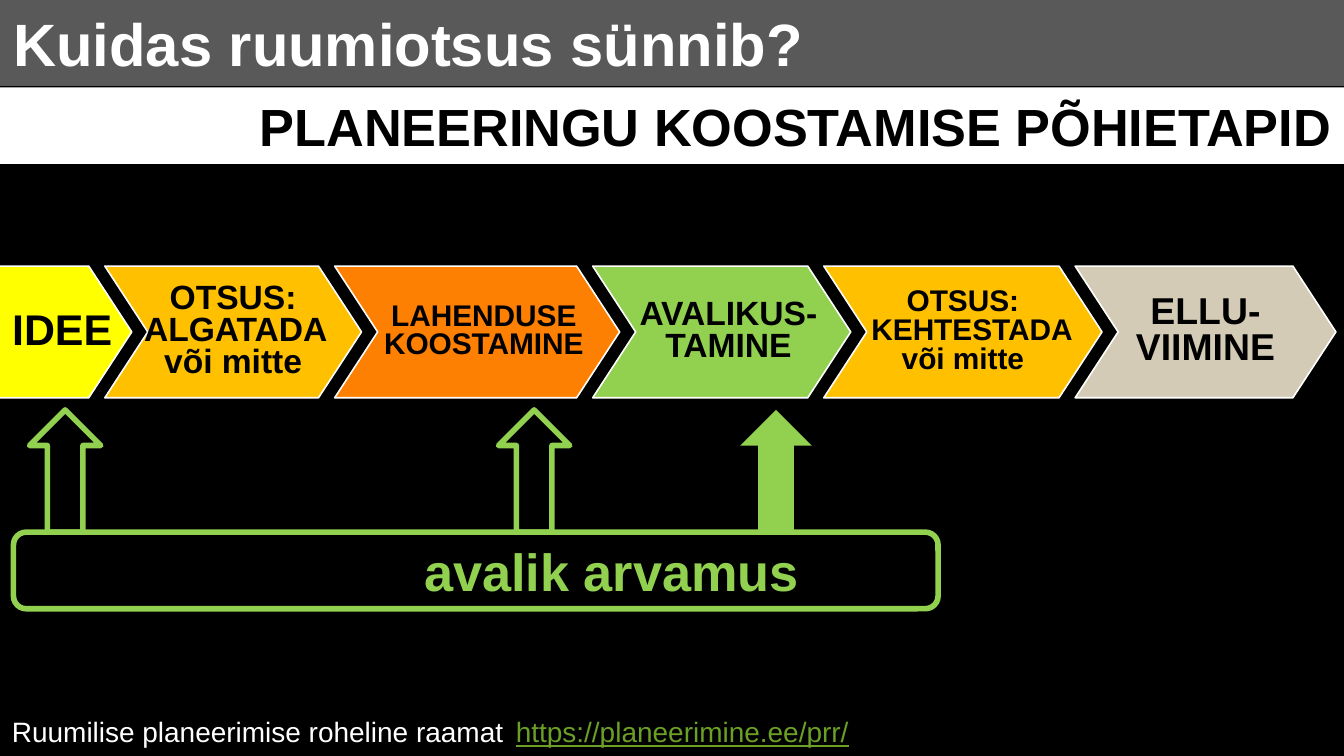
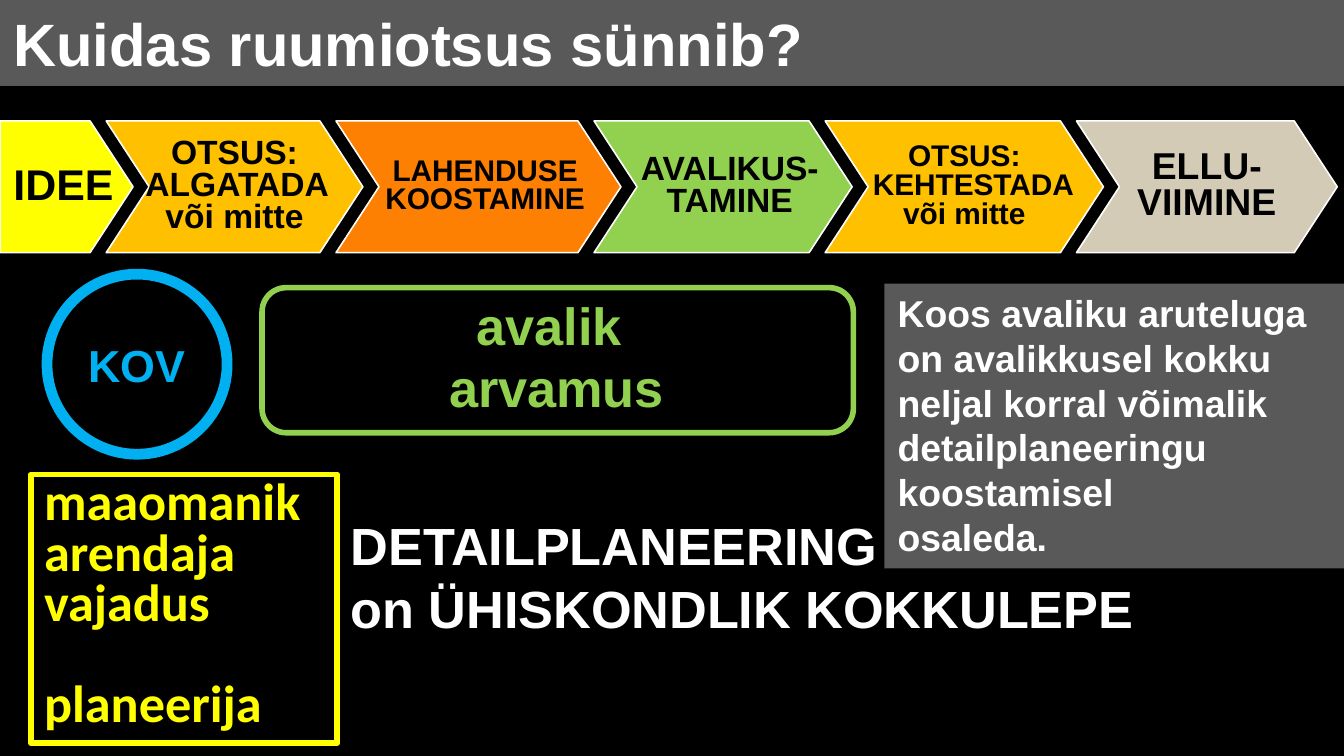
from dataclasses import dataclass

from lxml import etree
from pptx import Presentation
from pptx import util as u
from pptx.dml.color import RGBColor
from pptx.enum import shapes, text
from pptx.oxml import ns

CELL = u.Inches(0.1)
COLUMNS, ROWS = 100, 56.25
COLOURS = {
    "black": "000000", "white": "FFFFFF", "band": "595959", "yellow": "FFFF00",
    "amber": "FFC000", "orange": "FE8002", "green": "92D050", "sand": "D3CBB6",
    "link": "6B9F25", "blue": "00B0F0",
}
TITLE = "Kuidas ruumiotsus sünnib?"
STAGE_OVERLAP, STAGE_POINT, STAGE_HEIGHT = 2, 3.2, 9.8
STAGES = [
    (9.9, "yellow", 23, [("IDEE", 1)]),
    (19.1, "amber", 18, [("OTSUS:", 0), ("ALGATADA ", 1), ("või mitte", 0)]),
    (21.2, "orange", 16, [("LAHENDUSE", 1), ("KOOSTAMINE", 1)]),
    (19.2, "green", 18, [("AVALIKUS-TAMINE", 1)]),
    (20.7, "amber", 16, [("OTSUS:", 0), ("KEHTESTADA ", 1.9), ("või mitte", 0)]),
    (19.4, "sand", 20, [("ELLU-", 0), ("VIIMINE", 0)]),
]
LEFT, CENTER, RIGHT = text.PP_ALIGN.LEFT, text.PP_ALIGN.CENTER, text.PP_ALIGN.RIGHT
SHAPE = shapes.MSO_SHAPE


@dataclass
class Box:
    """A rectangle measured in grid columns and rows."""

    left: float
    top: float
    width: float
    height: float

    def emu(self):
        """Return the four lengths in EMU."""
        return [cells(n) for n in (self.left, self.top, self.width, self.height)]


def cells(count):
    """Convert a number of grid cells to a length."""
    return u.Emu(round(count * CELL))


def colour(name):
    """Look up a named colour."""
    return RGBColor.from_string(COLOURS[name])


def paint(shape, fill=None, line=None, weight=3):
    """Set the fill and outline of a shape and remove its shadow."""
    shape.shadow.inherit = False
    if fill:
        shape.fill.solid()
        shape.fill.fore_color.rgb = colour(fill)
    else:
        shape.fill.background()
    if line:
        shape.line.color.rgb = colour(line)
        shape.line.width = u.Pt(weight)
    else:
        shape.line.fill.background()


def write(shape, lines, size, ink, align=LEFT, bold=True, font="Arial", spacing=None,
          middle=False):
    """Write one paragraph per line and return the paragraphs."""
    frame = shape.text_frame
    frame.word_wrap = True
    frame.vertical_anchor = text.MSO_ANCHOR.MIDDLE if middle else text.MSO_ANCHOR.TOP
    frame.auto_size = (text.MSO_AUTO_SIZE.NONE if middle
                       else text.MSO_AUTO_SIZE.SHAPE_TO_FIT_TEXT)
    frame.text = "\n".join(lines)
    for paragraph in frame.paragraphs:
        paragraph.alignment = align
        if spacing:
            paragraph.line_spacing = spacing
        paragraph.font.name = font
        paragraph.font.size = u.Pt(size)
        paragraph.font.bold = bold
        paragraph.font.color.rgb = colour(ink)
    return frame.paragraphs


def add_shape(slide, kind, box, fill=None, line=None, weight=3):
    """Add a painted preset shape."""
    shape = slide.shapes.add_shape(kind, *box.emu())
    paint(shape, fill, line, weight)
    return shape


def add_label(slide, box, lines, ink, align=LEFT):
    """Add a large bold text box."""
    write(slide.shapes.add_textbox(*box.emu()), lines, 28, ink, align)


def add_base(presentation):
    """Add a black slide with the title band."""
    slide = presentation.slides.add_slide(presentation.slide_layouts[6])
    slide.background.fill.solid()
    slide.background.fill.fore_color.rgb = colour("black")
    band = add_shape(slide, SHAPE.RECTANGLE, Box(0, 0, COLUMNS, 6.4), "band")
    write(band, [TITLE], 32, "white")
    return slide


def add_stage(slide, box, fill, size, lines, first):
    """Add one chevron; the first stage has a straight left edge."""
    right, bottom = box.left + box.width, box.top + box.height
    shoulder, middle = right - STAGE_POINT, box.top + box.height / 2
    points = [(shoulder, box.top), (right, middle), (shoulder, bottom), (box.left, bottom)]
    if not first:
        points.append((box.left + STAGE_POINT, middle))
    builder = slide.shapes.build_freeform(cells(box.left), cells(box.top))
    builder.add_line_segments([(cells(x), cells(y)) for x, y in points])
    stage = builder.convert_to_shape()
    paint(stage, fill, "white", 0.85)
    frame = stage.text_frame
    frame.margin_left = frame.margin_right = cells(0 if first else 1.6)
    frame.margin_top = frame.margin_bottom = cells(0.3)
    paragraphs = write(stage, [words for words, _ in lines], size, "black",
                       LEFT if first else CENTER, spacing=0.9 if first else 0.8, middle=True)
    for paragraph, (_, indent) in zip(paragraphs, lines):
        properties = paragraph._p.get_or_add_pPr()
        properties.set("marL", str(cells(indent)))
        properties.set("indent", "0")


def add_process(slide, left, top):
    """Add the row of overlapping planning stages."""
    for index, (width, fill, size, lines) in enumerate(STAGES):
        add_stage(slide, Box(left, top, width, STAGE_HEIGHT), fill, size, lines, index == 0)
        left += width - STAGE_OVERLAP


def add_opinion(slide, box):
    """Add the public opinion bar with the arrows rising from it."""
    add_label(slide, Box(box.left + 5.4, box.top, 54, box.height), ["avalik arvamus"],
              "green", RIGHT)
    add_shape(slide, SHAPE.ROUNDED_RECTANGLE, box, line="green")
    for offset, fill, line in [(1.2, None, "green"), (36.1, None, "green"),
                               (54.1, "green", None)]:
        arrow = Box(box.left + offset, box.top - 9.1, 5.3, 9.1)
        add_shape(slide, SHAPE.UP_ARROW, arrow, fill, line)


def add_source(slide, box):
    """Add the source line with the address at a tab stop."""
    bar = add_shape(slide, SHAPE.RECTANGLE, box, "black")
    paragraph = write(bar, ["Ruumilise planeerimise roheline raamat\t"], 15, "white",
                      bold=False)[0]
    stops = etree.Element(ns.qn("a:tabLst"))
    etree.SubElement(stops, ns.qn("a:tab"), pos=str(cells(37.5)), algn="l")
    paragraph._p.pPr.find(ns.qn("a:defRPr")).addprevious(stops)
    address = paragraph.add_run()
    address.text = "https://planeerimine.ee/prr/"
    address.font.underline = True
    address.font.color.rgb = colour("link")


def add_participants(slide, box):
    """Add the local government, public and landowner shapes around a box."""
    add_label(slide, Box(box.left + 4, box.top - 0.1, 35.8, 10.4), ["avalik ", "arvamus"],
              "green", CENTER)
    add_shape(slide, SHAPE.ROUNDED_RECTANGLE, box, line="green")
    owner = add_shape(slide, SHAPE.RECTANGLE,
                      Box(box.left - 17.2, box.top + 13.9, 22.8, 20), line="yellow")
    lines = ["maaomanik", "arendaja", "vajadus", "planeerija"]
    paragraphs = write(owner, lines, 28, "yellow", font="Calibri", spacing=u.Pt(27))
    owner.text_frame.auto_size = text.MSO_AUTO_SIZE.NONE
    paragraphs[-1].space_before = u.Pt(27)
    council = add_shape(slide, SHAPE.OVAL, Box(box.left - 16, box.top - 1, 13.4, 13.4),
                        line="blue", weight=5.75)
    write(council, ["KOV"], 24, "blue", CENTER, middle=True)


def add_conclusion(slide, box):
    """Add the grey note and the closing statement beside it."""
    note = add_shape(slide, SHAPE.RECTANGLE, box, "band")
    write(note, ["Koos avaliku aruteluga", "on avalikkusel kokku", "neljal korral võimalik",
                 "detailplaneeringu", "koostamisel", "osaleda."], 20, "white")
    add_label(slide, Box(box.left - 40.7, box.top + 16.6, 72.6, 10.4),
              ["DETAILPLANEERING", "on ÜHISKONDLIK KOKKULEPE"], "white")


def build_stages_slide(presentation):
    """Build the slide on the main planning stages."""
    slide = add_base(presentation)
    add_process(slide, -0.1, 19.8)
    heading = add_shape(slide, SHAPE.RECTANGLE, Box(0, 6.5, COLUMNS, 5.7), "white")
    write(heading, ["PLANEERINGU KOOSTAMISE PÕHIETAPID"], 28, "black", RIGHT)
    add_opinion(slide, Box(1, 39.6, 68.8, 5.7))
    add_source(slide, Box(-0.1, 52.7, COLUMNS, 3.5))


def build_agreement_slide(presentation):
    """Build the slide on the detailed plan as an agreement."""
    slide = add_base(presentation)
    add_process(slide, 0, 9)
    add_participants(slide, Box(19.5, 21.4, 44, 10.8))
    add_conclusion(slide, Box(65.8, 21.1, 34.2, 21.2))


def main():
    """Create and save the presentation."""
    presentation = Presentation()
    presentation.slide_width = cells(COLUMNS)
    presentation.slide_height = cells(ROWS)
    build_stages_slide(presentation)
    build_agreement_slide(presentation)
    presentation.save("out.pptx")


if __name__ == "__main__":
    main()
